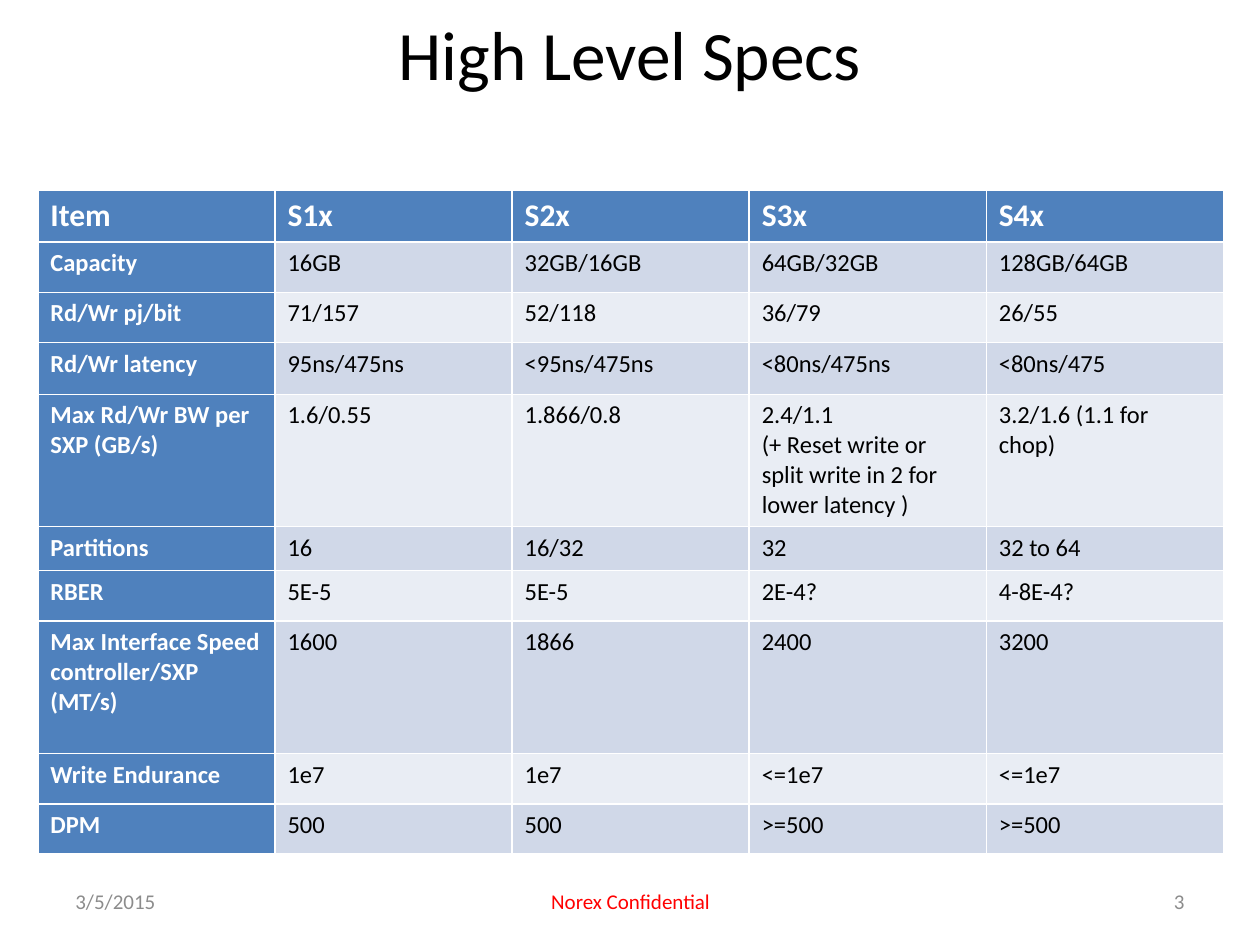
from pptx import Presentation, util as u
from pptx.dml.color import RGBColor
from pptx.enum import text

COLORS = {
    "black": "000000", "white": "FFFFFF", "gray": "8C8C8C", "red": "FF0000",
    "header": "4F81BD", "band_dark": "D0D8E8", "band_light": "E9EDF4",
}
ALIGN = text.PP_ALIGN


def style(p, size, color, bold=False, align=None):
    p.font.name = "Calibri"
    p.font.size = u.Pt(size)
    p.font.bold = bold
    p.font.color.rgb = RGBColor.from_string(COLORS[color])
    p.alignment = align


def add_text(s, words, box, size, color, align):
    tf = s.shapes.add_textbox(*[u.Inches(v) for v in box]).text_frame
    tf.word_wrap = True
    tf.vertical_anchor = text.MSO_ANCHOR.MIDDLE
    tf.text = words
    style(tf.paragraphs[0], size, color, align=align)


prs = Presentation()
prs.slide_width, prs.slide_height = u.Inches(10), u.Inches(7.5)
s = prs.slides.add_slide(prs.slide_layouts[6])

# Title and footer
add_text(s, "High Level Specs", (0.5, 0.12, 9, 0.59), 39.6, "black", ALIGN.CENTER)
add_text(s, "3/5/2015", (0.5, 6.95, 2.33, 0.4), 12, "gray", ALIGN.LEFT)
add_text(s, "Norex Confidential", (3.42, 6.95, 3.17, 0.4), 12, "red", ALIGN.CENTER)
add_text(s, "3", (7.17, 6.95, 2.33, 0.4), 12, "gray", ALIGN.RIGHT)

# Specs: row height, then the cells
specs = [
    (0.41, ["Item", "S1x", "S2x", "S3x", "S4x"]),
    (0.4, ["Capacity", "16GB", "32GB/16GB", "64GB/32GB", "128GB/64GB"]),
    (0.4, ["Rd/Wr pj/bit", "71/157", "52/118", "36/79", "26/55"]),
    (0.41, ["Rd/Wr latency", "95ns/475ns", "<95ns/475ns", "<80ns/475ns", "<80ns/475"]),
    (1.05, ["Max Rd/Wr BW per SXP (GB/s)", "1.6/0.55", "1.866/0.8",
            "2.4/1.1\n(+ Reset write or split write in 2 for lower latency )",
            "3.2/1.6 (1.1 for chop)"]),
    (0.35, ["Partitions", "16", "16/32", "32", "32 to 64"]),
    (0.4, ["RBER", "5E-5", "5E-5", "2E-4?", "4-8E-4?"]),
    (1.05, ["Max Interface Speed controller/SXP (MT/s)", "1600", "1866", "2400", "3200"]),
    (0.4, ["Write Endurance", "1e7", "1e7", "<=1e7", "<=1e7"]),
    (0.4, ["DPM", "500", "500", ">=500", ">=500"]),
]

# Table: the default style supplies the white rules between cells
table = s.shapes.add_table(len(specs), 5, u.Inches(0.3), u.Inches(1.51),
                           u.Inches(9.41), u.Inches(5.25)).table
table.first_col = True
for i, (height, words) in enumerate(specs):
    table.rows[i].height = u.Inches(height)
    for j, word in enumerate(words):
        cell = table.cell(i, j)
        heading = i == 0 or j == 0
        fill = "header" if heading else "band_dark" if i % 2 else "band_light"
        cell.fill.solid()
        cell.fill.fore_color.rgb = RGBColor.from_string(COLORS[fill])
        cell.text = word
        for p in cell.text_frame.paragraphs:
            style(p, 14 if i else 18, "white" if heading else "black", heading)

prs.save("out.pptx")
